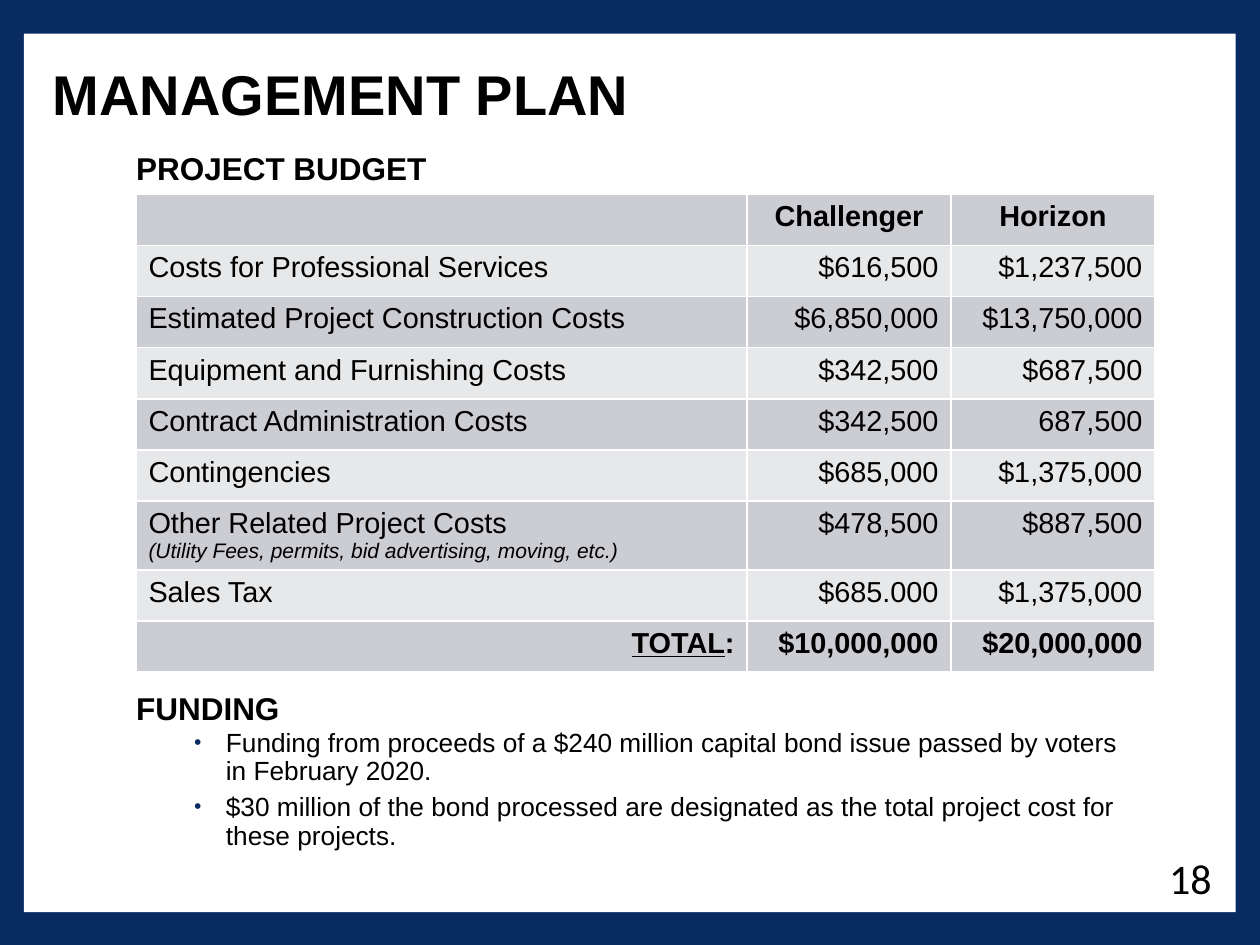
import pptx
import pptx.util
import pptx.dml.color
import pptx.enum.shapes
import pptx.enum.text
import pptx.oxml
import pptx.oxml.ns

Cm = pptx.util.Cm
Pt = pptx.util.Pt
Align = pptx.enum.text.PP_ALIGN
Anchor = pptx.enum.text.MSO_ANCHOR
hues = {"navy": "072B62", "white": "FFFFFF", "black": "000000",
        "dark": "CCCDD3", "light": "E7E8EA"}


def tint(name):
    return pptx.dml.color.RGBColor.from_string(hues[name])


def put(par, text, size, bold=False, face="Arial"):
    run = par.add_run()
    run.text = text
    run.font.size = Pt(size)
    run.font.name = face
    run.font.bold = bold
    run.font.color.rgb = tint("black")
    return run


deck = pptx.Presentation()
deck.slide_width, deck.slide_height = Cm(25.4), Cm(19.05)
slide = deck.slides.add_slide(deck.slide_layouts[3])
title, plan, fund = slide.placeholders

# Navy frame around a white panel
slide.background.fill.solid()
slide.background.fill.fore_color.rgb = tint("navy")
panel = slide.shapes.add_shape(pptx.enum.shapes.MSO_SHAPE.RECTANGLE,
                               Cm(0.48), Cm(0.68), Cm(24.43), Cm(17.71))
panel.shadow.inherit = False
panel.fill.solid()
panel.fill.fore_color.rgb = tint("white")
panel.line.fill.background()
panel.element.getparent().insert(2, panel.element)

# Title and the two section heads
heads = [
    (title, "MANAGEMENT PLAN", 32, (0.81, 0.97, 20.57, 1.98), Anchor.MIDDLE),
    (plan, "PROJECT BUDGET", 18, (2.39, 2.97, 20.57, 0.94), Anchor.TOP),
    (fund, "FUNDING", 18, (2.39, 13.84, 20.57, 3.7), Anchor.TOP),
]
for box, text, size, place, anchor in heads:
    box.left, box.top, box.width, box.height = map(Cm, place)
    frame = box.text_frame
    frame.word_wrap = True
    frame.auto_size = pptx.enum.text.MSO_AUTO_SIZE.NONE
    frame.vertical_anchor = anchor
    par = frame.paragraphs[0]
    par.alignment = Align.LEFT
    par.line_spacing = 0.9
    par.space_before = Pt(0)
    put(par, text, size, True)
    if box is not title:
        props = par._p.get_or_add_pPr()
        props.set("marL", str(Cm(0.1)))
        props.set("indent", "0")
        props.append(pptx.oxml.parse_xml(
            f'<a:buNone {pptx.oxml.ns.nsdecls("a")}/>'))

# Funding bullets
notes = [
    "Funding from proceeds of a $240 million capital bond issue passed by voters in February 2020.",
    "$30 million of the bond processed are designated as the total project cost for these projects.",
]
marks = ['<a:buClr {}><a:srgbClr val="' + hues["navy"] + '"/></a:buClr>',
         '<a:buSzPct {} val="80000"/>',
         '<a:buFont {} typeface="Arial"/>',
         '<a:buChar {} char="•"/>']
for text in notes:
    par = fund.text_frame.add_paragraph()
    par.level = 1
    par.line_spacing = 0.9
    par.space_before, par.space_after = Pt(1.5), Pt(3)
    put(par, text, 15)
    props = par._p.get_or_add_pPr()
    props.set("marL", str(Cm(1.91)))
    props.set("indent", str(Cm(-0.64)))
    for mark in marks:
        props.append(pptx.oxml.parse_xml(
            mark.format(pptx.oxml.ns.nsdecls("a"))))

# Budget table
rows = [
    ("", "Challenger", "Horizon"),
    ("Costs for Professional Services", "$616,500", "$1,237,500"),
    ("Estimated Project Construction Costs", "$6,850,000", "$13,750,000"),
    ("Equipment and Furnishing Costs", "$342,500", "$687,500"),
    ("Contract Administration Costs", "$342,500", "687,500"),
    ("Contingencies", "$685,000", "$1,375,000"),
    ("Other Related Project Costs", "$478,500", "$887,500"),
    ("Sales Tax", "$685.000", "$1,375,000"),
    ("TOTAL", "$10,000,000", "$20,000,000"),
]
last, other = len(rows) - 1, 6
grid = slide.shapes.add_table(len(rows), 3, Cm(2.74), Cm(3.92),
                              Cm(20.54), Cm(9.63)).table
grid.first_row = grid.horz_banding = False
for col, width in zip(grid.columns, (12.32, 4.11, 4.11)):
    col.width = Cm(width)
for r, row in enumerate(rows):
    grid.rows[r].height = Cm(1.39 if r == other else 1.03)
    for c, text in enumerate(row):
        cell = grid.cell(r, c)
        props = cell._tc.get_or_add_tcPr()
        for side in ("lnL", "lnR", "lnT", "lnB"):
            props.append(pptx.oxml.parse_xml(
                f'<a:{side} {pptx.oxml.ns.nsdecls("a")} w="12700"><a:solidFill>'
                f'<a:srgbClr val="{hues["white"]}"/></a:solidFill></a:{side}>'))
        cell.fill.solid()
        cell.fill.fore_color.rgb = tint("light" if r % 2 else "dark")
        par = cell.text_frame.paragraphs[0]
        if r == 0:
            par.alignment = Align.CENTER
        elif c or r == last:
            par.alignment = Align.RIGHT
        if text:
            run = put(par, text, 16.5, r in (0, last))
        if text == "TOTAL":
            run.font.underline = True
            put(par, ":", 16.5, True)

# Small print under the other costs
par = grid.cell(other, 0).text_frame.add_paragraph()
run = put(par, "(Utility Fees, permits, bid advertising, moving, etc.)", 12)
run.font.italic = True

# Page number
page = slide.shapes.add_textbox(Cm(23.32), Cm(17.07), Cm(1.65), Cm(1.27))
page.text_frame.word_wrap = True
put(page.text_frame.paragraphs[0], "18", 24, face="Calibri")

deck.save("out.pptx")
